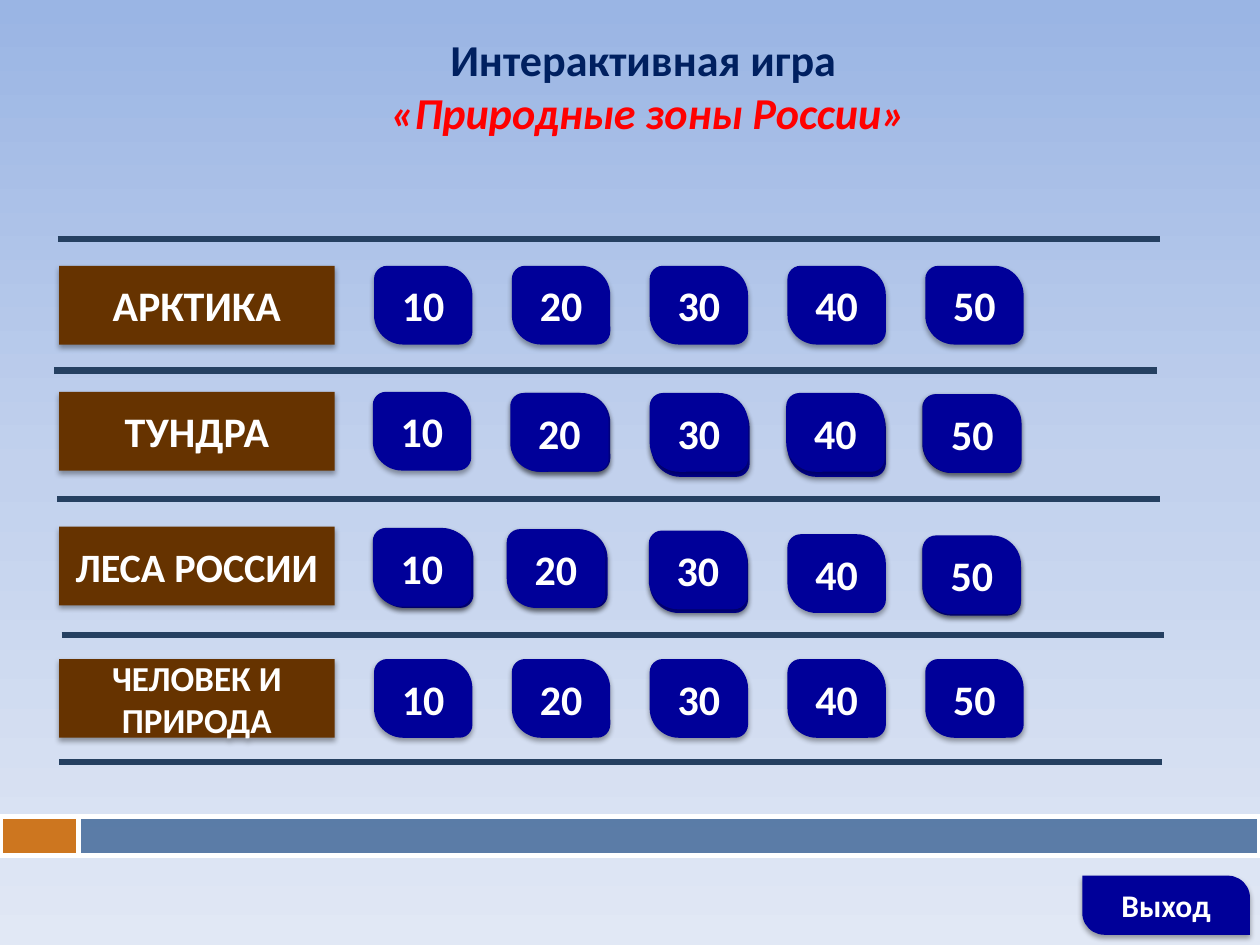
import copy

import pptx
import pptx.dml.color
import pptx.enum.shapes
import pptx.enum.text
import pptx.oxml
import pptx.oxml.ns
import pptx.util

Pt = pptx.util.Pt
RGB = pptx.dml.color.RGBColor
SHAPE = pptx.enum.shapes.MSO_SHAPE

SKY = [RGB(0x9A, 0xB5, 0xE4), RGB(0xC2, 0xD1, 0xED), RGB(0xE1, 0xE8, 0xF5)]
NAVY = RGB(0x00, 0x20, 0x60)
RED = RGB(0xFF, 0x00, 0x00)
WHITE = RGB(0xFF, 0xFF, 0xFF)
BROWN = RGB(0x66, 0x33, 0x00)
BLUE = RGB(0x00, 0x00, 0x99)
RULE = RGB(0x25, 0x40, 0x61)
ORANGE = RGB(0xCC, 0x66, 0x00)
STEEL = RGB(0x37, 0x60, 0x92)

SHADOW = (
    '<a:effectLst %s><a:outerShdw blurRad="%d" dist="%d" dir="5400000" rotWithShape="0">'
    '<a:srgbClr val="000000"><a:alpha val="35000"/></a:srgbClr></a:outerShdw></a:effectLst>'
    % (pptx.oxml.ns.nsdecls("a"), Pt(3.1), Pt(1.8))
)

LABEL_LEFT, LABEL_WIDTH, ROW_HEIGHT = 33.75, 157.5, 45
SCORE_LEFT, SCORE_PITCH, SCORE_WIDTH = 213.75, 78.75, 56.25
RULE_LENGTH = 630
SCORES = (10, 20, 30, 40, 50)
ALIGNED = [(0, 0)] * 5

# Topic, size, top, then each button's (dx, dy) from the grid,
# then the buttons that peek out behind: {column: (dx, dy)}
TOPICS = [
    ("АРКТИКА", 24, 151.9, ALIGNED, {}),
    ("ТУНДРА", 24, 223.9,
     [(-0.7, 0), (-0.9, 0.7), (0, 0.7), (-0.7, 0.7), (-1.2, 1.4)],
     {1: (0, 0.7), 2: (0.9, 3.6), 3: (0, 3.6), 4: (-1.7, 1.4)}),
    ("ЛЕСА РОССИИ", 23, 301,
     [(-0.7, 0.7), (-2.9, 1.4), (-0.5, 2.2), (0, 4.3), (-1.5, 5)],
     {0: (0.6, 1.4), 1: (-1.5, 1.4), 2: (0, 4.3), 4: (-1.7, 5.8)}),
    ("ЧЕЛОВЕК И ПРИРОДА", 20, 376.6, ALIGNED, {}),
]
RULES = [(33.1, 136.8), (31, 211.7), (32.6, 285.1), (35.2, 362.9), (33.8, 435.6)]


def write(paragraph, text, size=24, color=WHITE, bold=True, italic=False):
    paragraph.alignment = pptx.enum.text.PP_ALIGN.CENTER
    run = paragraph.add_run()
    run.text = text
    font = run.font
    font.name, font.size, font.bold, font.italic = "Calibri", Pt(size), bold, italic
    font.color.rgb = color


class GameBoard:
    def __init__(self, slide):
        self.slide = slide

    def background(self, colors):
        fill = self.slide.background.fill
        fill.gradient()
        fill.gradient_angle = 270
        stop_list = self.slide.element.xpath(".//a:gsLst")[0]
        stop_list.insert(1, copy.deepcopy(stop_list[0]))
        for stop, color, position in zip(fill.gradient_stops, colors, (0, 0.5, 1)):
            stop.color.rgb = color
            stop.position = position

    def title(self, left, top, width, height):
        frame = self.slide.shapes.add_textbox(
            Pt(left), Pt(top), Pt(width), Pt(height)).text_frame
        frame.word_wrap = True
        frame.vertical_anchor = pptx.enum.text.MSO_ANCHOR.MIDDLE
        heading = frame.paragraphs[0]
        write(heading, "Интерактивная игра ", size=25.2, color=NAVY)
        heading.add_line_break()
        write(heading, "«Природные зоны России»", size=25.2, color=RED, italic=True)

    def block(self, kind, left, top, width, height, color):
        block = self.slide.shapes.add_shape(
            kind, Pt(left), Pt(top), Pt(width), Pt(height))
        block.fill.solid()
        block.fill.fore_color.rgb = color
        block.line.fill.background()
        block.shadow.inherit = False
        return block

    def band(self, left, width, color, opacity):
        band = self.block(SHAPE.RECTANGLE, left, 466.6, width, 22.3, color)
        band.line.color.rgb = WHITE
        band.line.width = Pt(3)
        tint = band.element.spPr.xpath("./a:solidFill/a:srgbClr")[0]
        tint.append(pptx.oxml.parse_xml(
            '<a:alpha %s val="%d"/>' % (pptx.oxml.ns.nsdecls("a"), opacity * 1000)))

    def rule(self, left, top):
        rule = self.slide.shapes.add_connector(
            pptx.enum.shapes.MSO_CONNECTOR.STRAIGHT,
            Pt(left), Pt(top), Pt(left + RULE_LENGTH), Pt(top))
        rule.line.color.rgb = RULE
        rule.line.width = Pt(3.5)
        rule.element.spPr.append(pptx.oxml.parse_xml(
            "<a:effectLst %s/>" % pptx.oxml.ns.nsdecls("a")))

    def plate(self, kind, left, top, width, height, color, text="", size=24):
        """Draw a raised block with a soft shadow and an optional caption."""
        plate = self.block(kind, left, top, width, height, color)
        properties = plate.element.spPr
        properties.remove(properties.xpath("./a:effectLst")[0])
        properties.append(pptx.oxml.parse_xml(SHADOW))
        if text:
            plate.text_frame.word_wrap = True
            plate.text_frame.vertical_anchor = pptx.enum.text.MSO_ANCHOR.MIDDLE
            write(plate.text_frame.paragraphs[0], text, size=size)
        return plate

    def button(self, left, top, width, height, text="", size=24, corner=0.167):
        button = self.plate(SHAPE.ROUND_2_DIAG_RECTANGLE, left, top, width, height,
                            BLUE, text, size)
        button.adjustments[0] = corner
        button.adjustments[1] = 0.373

    def score(self, column, row_top, shift, text=""):
        self.button(SCORE_LEFT + column * SCORE_PITCH + shift[0], row_top + shift[1],
                    SCORE_WIDTH, ROW_HEIGHT, text)


def main():
    deck = pptx.Presentation()
    deck.slide_width, deck.slide_height = Pt(720), Pt(540)
    board = GameBoard(deck.slides.add_slide(deck.slide_layouts[6]))

    board.background(SKY)
    board.title(139.7, 15.1, 461.5, 67.7)
    board.band(0, 45, ORANGE, 87)
    board.band(45, 675, STEEL, 78)
    for left, top in RULES:
        board.rule(left, top)

    for topic, size, top, shifts, backs in TOPICS:
        board.plate(SHAPE.RECTANGLE, LABEL_LEFT, top, LABEL_WIDTH, ROW_HEIGHT,
                    BROWN, topic, size)
        for column, shift in backs.items():
            board.score(column, top, shift)
        for column, (points, shift) in enumerate(zip(SCORES, shifts)):
            board.score(column, top, shift, str(points))

    board.button(618.5, 500.4, 95.8, 33.8, "Выход", size=18, corner=0)
    deck.save("out.pptx")


if __name__ == "__main__":
    main()
